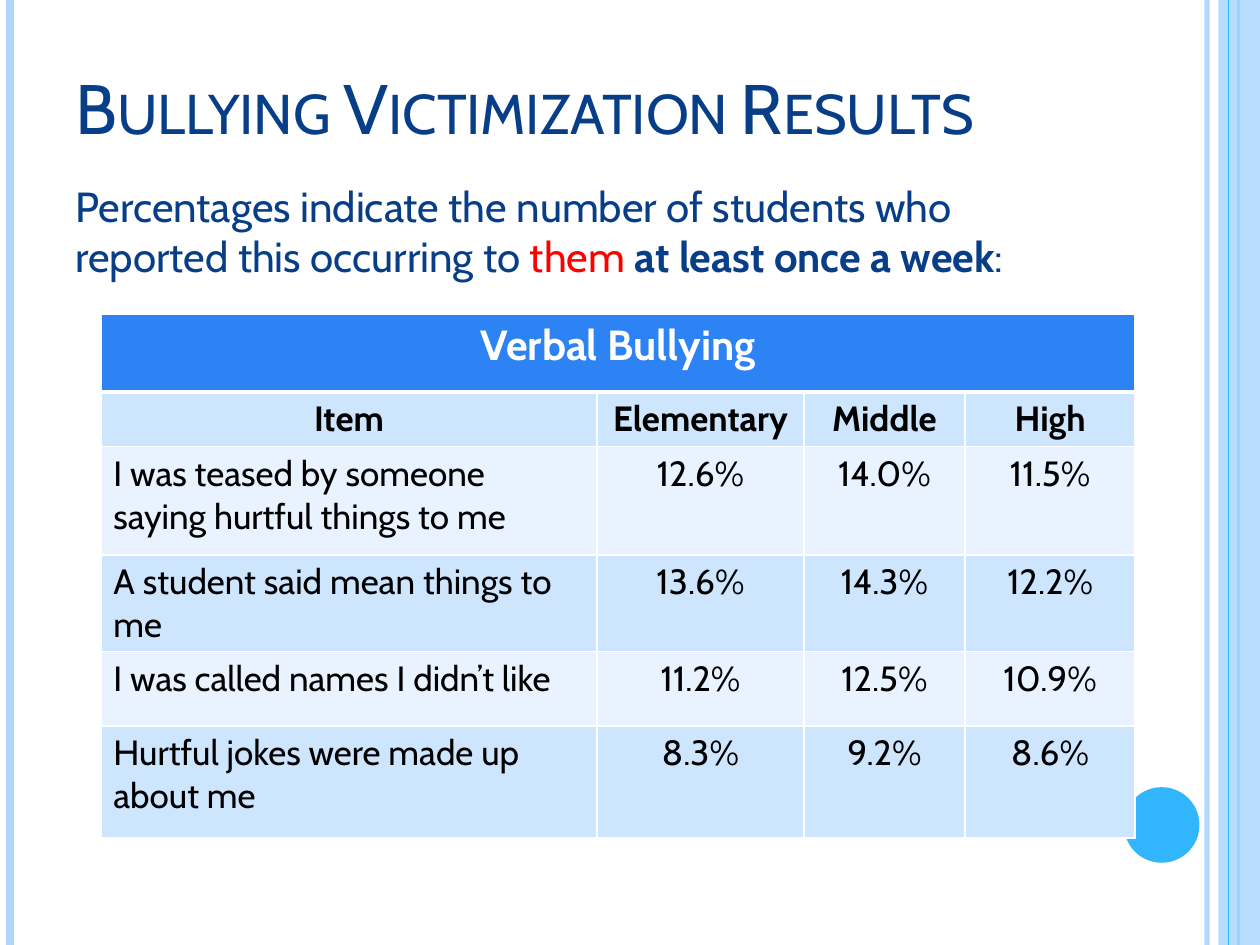
from dataclasses import dataclass

from lxml.etree import SubElement
from pptx import Presentation
from pptx.dml.color import RGBColor as Color
from pptx.enum.shapes import MSO_CONNECTOR as Connector, MSO_SHAPE as Shape
from pptx.enum.text import MSO_ANCHOR as Anchor, PP_ALIGN as Align
from pptx.oxml.ns import qn
from pptx.util import Inches, Pt


@dataclass(frozen=True)
class Theme:
    font: str = "Cabin"
    navy: str = "073E87"
    red: str = "FF0000"
    black: str = "000000"
    white: str = "FFFFFF"
    sky: str = "AED7FE"
    cyan: str = "31B6FD"
    header: str = "2D83F4"
    bands: tuple = ("CEE5FE", "E8F3FF")
    title_size: int = 40
    lead_size: int = 24
    cell_size: int = 20


@dataclass(frozen=True)
class Box:
    """An area in grid units; the slide is 10 columns by 7.5 rows."""
    left: float
    top: float
    width: float
    height: float

    def lengths(self):
        return [Inches(v) for v in (self.left, self.top, self.width, self.height)]

    def area(self, left, top, width, height):
        """Box within this one, given in shares of its size."""
        return Box(self.left + left * self.width, self.top + top * self.height,
                   width * self.width, height * self.height)


THEME = Theme()
PAGE = Box(0, 0, 10, 7.5)
COLUMN_WIDTHS = (3.94, 1.64, 1.28, 1.35)
ROW_HEIGHTS = (0.62, 0.41, 0.86, 0.6, 0.59, 0.89)
TABLE_TITLE = "Verbal Bullying"
ROWS = (
    ("Item", "Elementary", "Middle", "High"),
    ("I was teased by someone saying hurtful things to me", "12.6%", "14.0%", "11.5%"),
    ("A student said mean things to me", "13.6%", "14.3%", "12.2%"),
    ("I was called names I didn’t like", "11.2%", "12.5%", "10.9%"),
    ("Hurtful jokes were made up about me", "8.3%", "9.2%", "8.6%"),
)


def rgb(value):
    return Color.from_string(value)


def set_alpha(properties, percent):
    color = next(properties.iter(qn("a:srgbClr")))
    SubElement(color, qn("a:alpha"), val=str(percent * 1000))


def style_paragraph(paragraph, size, color, bold=False, align=Align.LEFT):
    font = paragraph.font
    font.name, font.size, font.bold = THEME.font, Pt(size), bold
    font.color.rgb = rgb(color)
    paragraph.alignment = align


def add_vertical_line(slide, box, share, color, width, alpha=None):
    left, top, _, height = box.area(share, 0, 0, 1).lengths()
    line = slide.shapes.add_connector(Connector.STRAIGHT, left, top, left, top + height)
    line.line.color.rgb = rgb(color)
    line.line.width = Pt(width)
    properties = line._element.spPr
    if alpha:
        set_alpha(properties, alpha)
    SubElement(properties, qn("a:effectLst"))


def add_plain_shape(slide, kind, box, color, alpha=None):
    shape = slide.shapes.add_shape(kind, *box.lengths())
    shape.shadow.inherit = False
    shape.fill.solid()
    shape.fill.fore_color.rgb = rgb(color)
    shape.line.fill.background()
    if alpha:
        set_alpha(shape._element.spPr, alpha)


def add_frame(slide, box):
    """Edge stripes, right-hand band and corner dot."""
    add_vertical_line(slide, box, 0.958, THEME.sky, 3, 93)
    add_vertical_line(slide, box, 0.008, THEME.sky, 4.5)
    add_vertical_line(slide, box, 0.983, THEME.cyan, 1.5)
    add_plain_shape(slide, Shape.RECTANGLE, box.area(0.967, 0, 0.033, 1), THEME.sky, 87)
    add_vertical_line(slide, box, 0.975, THEME.cyan, 0.75)
    add_plain_shape(slide, Shape.OVAL, box.area(0.892, 0.833, 0.06, 0.08), THEME.cyan)


def add_text(slide, box, size):
    frame = slide.shapes.add_textbox(*box.lengths()).text_frame
    frame.word_wrap = True
    frame.vertical_anchor = Anchor.BOTTOM
    paragraph = frame.paragraphs[0]
    style_paragraph(paragraph, size, THEME.navy)
    return paragraph


def add_title(slide, box):
    run = add_text(slide, box, THEME.title_size).add_run()
    run.text = "Bullying Victimization Results"
    run._r.get_or_add_rPr().set("cap", "small")


def add_lead(slide, box):
    paragraph = add_text(slide, box, THEME.lead_size)
    for text, color, bold in (
        ("Percentages indicate the number of students who reported this occurring to",
         THEME.navy, False),
        (" them ", THEME.red, False),
        ("at least once a week", THEME.navy, True),
        (":", THEME.navy, False),
    ):
        run = paragraph.add_run()
        run.text = text
        run.font.color.rgb = rgb(color)
        run.font.bold = bold


def set_borders(cell, bottom):
    properties = cell._tc.get_or_add_tcPr()
    for side, width in (("L", 1), ("R", 1), ("T", 1), ("B", bottom)):
        line = SubElement(properties, qn(f"a:ln{side}"), w=str(Pt(width)))
        fill = SubElement(line, qn("a:solidFill"))
        SubElement(fill, qn("a:srgbClr"), val=THEME.white)


def fill_cell(cell, text, fill, size, color, bold, align, bottom=1):
    set_borders(cell, bottom)
    cell.fill.solid()
    cell.fill.fore_color.rgb = rgb(fill)
    cell.text = text
    style_paragraph(cell.text_frame.paragraphs[0], size, color, bold, align)


def add_results_table(slide, box):
    table = slide.shapes.add_table(len(ROW_HEIGHTS), len(COLUMN_WIDTHS),
                                   *box.lengths()).table
    table.first_row = table.horz_banding = False
    for column, width in zip(table.columns, COLUMN_WIDTHS):
        column.width = Inches(box.width * width / sum(COLUMN_WIDTHS))
    for row, height in zip(table.rows, ROW_HEIGHTS):
        row.height = Inches(box.height * height / sum(ROW_HEIGHTS))

    # Heading across all columns
    table.cell(0, 0).merge(table.cell(0, len(COLUMN_WIDTHS) - 1))
    for index, cell in enumerate(table.rows[0].cells):
        fill_cell(cell, "" if index else TABLE_TITLE, THEME.header, THEME.lead_size,
                  THEME.white, True, Align.CENTER, bottom=3)

    # Column names, then items with their percentages
    for row, values in enumerate(ROWS):
        for column, value in enumerate(values):
            is_item = row > 0 and column == 0
            fill_cell(table.cell(row + 1, column), value, THEME.bands[row % 2],
                      THEME.cell_size, THEME.black, row == 0,
                      Align.LEFT if is_item else Align.CENTER)


def main():
    presentation = Presentation()
    presentation.slide_width = Inches(PAGE.width)
    presentation.slide_height = Inches(PAGE.height)
    slide = presentation.slides.add_slide(presentation.slide_layouts[6])
    add_frame(slide, PAGE)
    add_title(slide, Box(0.5, 0.32, 8.17, 0.91))
    add_lead(slide, Box(0.5, 1.09, 8.29, 1.19))
    add_results_table(slide, Box(0.8, 2.49, sum(COLUMN_WIDTHS), sum(ROW_HEIGHTS)))
    presentation.save("out.pptx")


if __name__ == "__main__":
    main()
